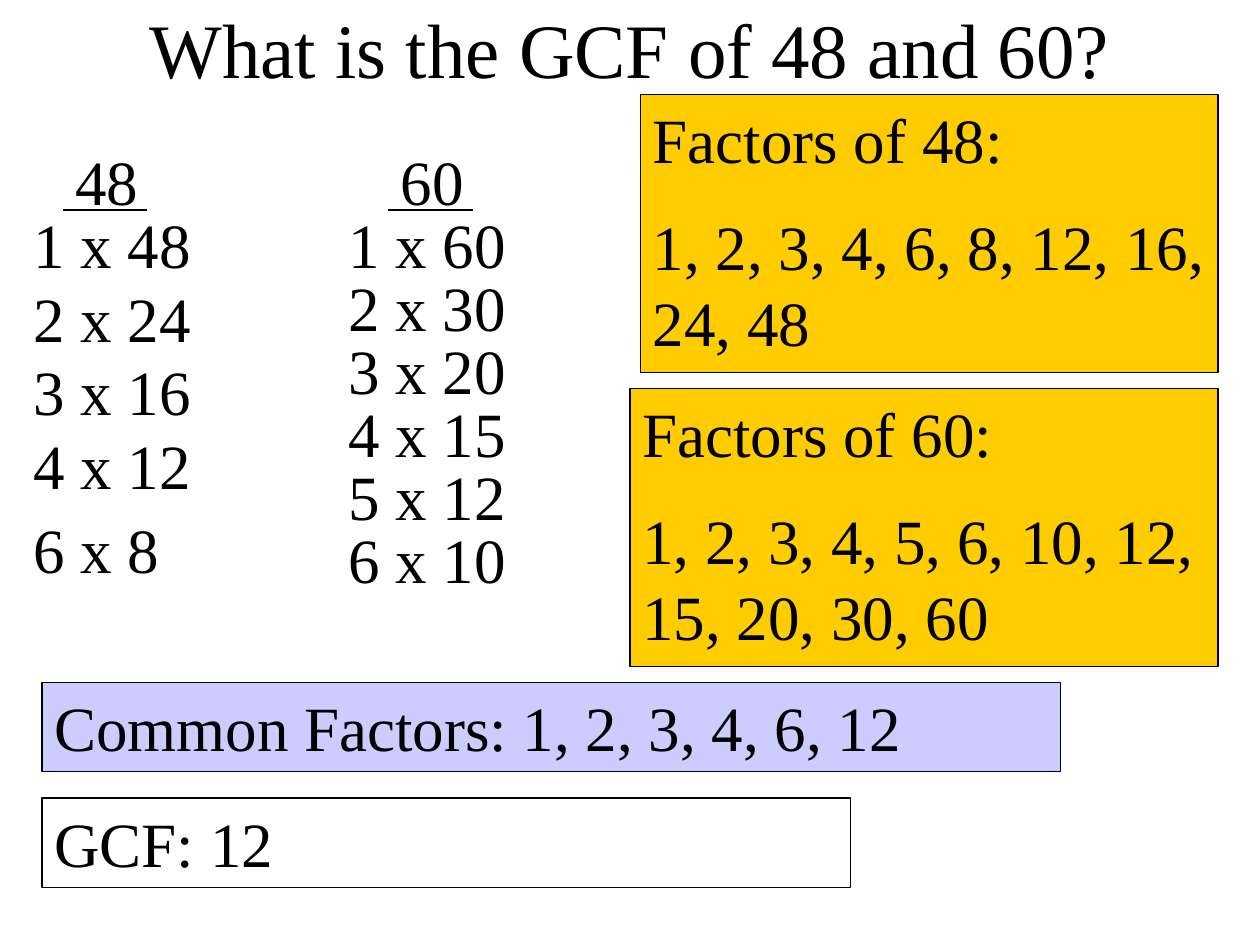
"""Build a slide that finds the greatest common factor of 48 and 60."""
from dataclasses import dataclass

from lxml.etree import SubElement
from pptx import Presentation
from pptx.dml.color import RGBColor
from pptx.enum.shapes import MSO_CONNECTOR, MSO_SHAPE
from pptx.enum.text import MSO_ANCHOR, MSO_AUTO_SIZE, PP_ALIGN
from pptx.oxml.ns import qn
from pptx.slide import Slide
from pptx.text.text import TextFrame
from pptx.util import Emu, Pt

PX = 7620
FONT = "Times New Roman"
TEXT_HEIGHT = 84
COLORS = {"ink": "000000", "factors": "FFCC00", "common": "CCCCFF", "answer": "FFFFFF"}


@dataclass
class FactorColumn:
    number: str
    head_left: int
    pairs_left: int
    pairs: dict[str, int]


@dataclass
class Panel:
    left: int
    top: int
    width: int
    height: int
    fill: str
    lines: list[str]


COLUMNS = [
    FactorColumn("48", 60, 20, {"1 x 48": 190, "2 x 24": 260, "3 x 16": 330,
                                "4 x 12": 400, "6 x 8": 480}),
    FactorColumn("60", 370, 320, {
        pair: 190 + 60 * i for i, pair in enumerate(
            ["1 x 60", "2 x 30", "3 x 20", "4 x 15", "5 x 12", "6 x 10"])}),
]
PANELS = [
    Panel(610, 90, 550, 265, "factors", ["Factors of 48:", "1, 2, 3, 4, 6, 8, 12, 16, 24, 48"]),
    Panel(600, 370, 560, 265, "factors",
          ["Factors of 60:", "1, 2, 3, 4, 5, 6, 10, 12, 15, 20, 30, 60"]),
    Panel(40, 650, 970, 85, "common", ["Common Factors: 1, 2, 3, 4, 6, 12"]),
    Panel(40, 760, 770, 85, "answer", ["GCF: 12"]),
]


def px(*values: int) -> list[Emu]:
    return [Emu(v * PX) for v in values]


def color(name: str) -> RGBColor:
    return RGBColor.from_string(COLORS[name])


def write(tf: TextFrame, lines: list[str], size: int = 36,
          align: PP_ALIGN = PP_ALIGN.LEFT) -> None:
    tf.text = "\n".join(lines)
    tf.word_wrap = True
    for i, p in enumerate(tf.paragraphs):
        p.alignment = align
        p.space_before = Pt(18 if i else 0)
        for r in p.runs:
            r.font.name = FONT
            r.font.size = Pt(size)
            r.font.color.rgb = color("ink")


def add_text(s: Slide, text: str, left: int, top: int, width: int) -> None:
    tf = s.shapes.add_textbox(*px(left, top, width, TEXT_HEIGHT)).text_frame
    write(tf, [text])
    tf.auto_size = MSO_AUTO_SIZE.SHAPE_TO_FIT_TEXT


def add_column(s: Slide, column: FactorColumn) -> None:
    left = column.head_left
    add_text(s, column.number, left, 130, 100)
    line = s.shapes.add_connector(MSO_CONNECTOR.STRAIGHT, *px(left, 200, left + 80, 200))
    line.line.color.rgb = color("ink")
    line.line.width = Pt(0.75)
    SubElement(line._element.spPr, qn("a:effectLst"))
    for pair, top in column.pairs.items():
        add_text(s, pair, column.pairs_left, top, 200)


def add_panel(s: Slide, panel: Panel) -> None:
    sp = s.shapes.add_shape(MSO_SHAPE.RECTANGLE,
                            *px(panel.left, panel.top, panel.width, panel.height))
    sp.shadow.inherit = False
    sp.fill.solid()
    sp.fill.fore_color.rgb = color(panel.fill)
    sp.line.color.rgb = color("ink")
    sp.line.width = Pt(0.75)
    write(sp.text_frame, panel.lines)
    sp.text_frame.vertical_anchor = MSO_ANCHOR.TOP
    sp.text_frame.auto_size = MSO_AUTO_SIZE.SHAPE_TO_FIT_TEXT


def main() -> None:
    prs = Presentation()
    prs.slide_width, prs.slide_height = px(1200, 900)
    s = prs.slides.add_slide(prs.slide_layouts[5])
    title = s.shapes.title
    title.left, title.top, title.width, title.height = px(90, -30, 1020, 150)
    write(title.text_frame, ["What is the GCF of 48 and 60?"], 44, PP_ALIGN.CENTER)
    title.text_frame.vertical_anchor = MSO_ANCHOR.MIDDLE
    for column in COLUMNS:
        add_column(s, column)
    for panel in PANELS:
        add_panel(s, panel)
    prs.save("out.pptx")


if __name__ == "__main__":
    main()
